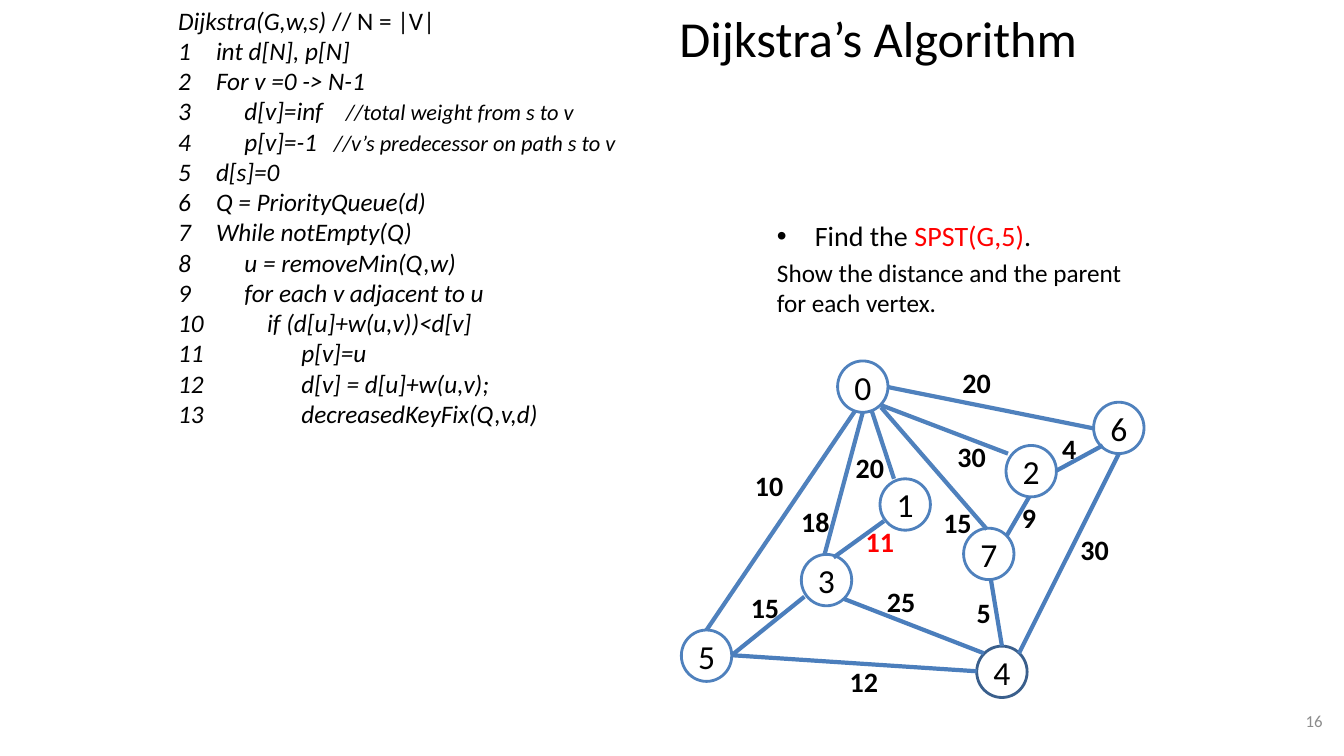
from lxml import etree
from pptx import Presentation
from pptx.dml.color import RGBColor
from pptx.enum.shapes import MSO_CONNECTOR, MSO_SHAPE
from pptx.enum.text import MSO_ANCHOR, MSO_AUTO_SIZE, PP_ALIGN
from pptx.oxml.ns import qn
from pptx.util import Pt

BLACK = RGBColor(0x00, 0x00, 0x00)
RED = RGBColor(0xFF, 0x00, 0x00)
GRAY = RGBColor(0x8C, 0x8C, 0x8C)
BLUE = RGBColor(0x4F, 0x81, 0xBD)
MID = RGBColor(0x4B, 0x7E, 0xBC)
DARK = RGBColor(0x3A, 0x5F, 0x8C)

LINE, OVAL = MSO_CONNECTOR.STRAIGHT, MSO_SHAPE.OVAL
MIDDLE, NO_FIT = MSO_ANCHOR.MIDDLE, MSO_AUTO_SIZE.NONE
LEFT, CENTER, RIGHT = PP_ALIGN.LEFT, PP_ALIGN.CENTER, PP_ALIGN.RIGHT

FONT = "Calibri"
NODE_W, NODE_H = 36, 36.7
HANG = 27  # room for a line number or bullet

# Depth in points, code, comment, tab stop of the comment
CODE = [
    (0, "int d[N], p[N]", "", 0),
    (0, "For v =0 -> N-1", "", 0),
    (20.3, "d[v]=inf", "//total weight from s to v", 119.7),
    (20.3, "p[v]=-1", "//v’s predecessor on path s to v", 111.2),
    (0, "d[s]=0", "", 0),
    (0, "Q = PriorityQueue(d)", "", 0),
    (0, "While notEmpty(Q)", "", 0),
    (20.3, "u = removeMin(Q,w)", "", 0),
    (20.3, "for each v adjacent to u", "", 0),
    (36.6, "if (d[u]+w(u,v))<d[v]", "", 0),
    (61, "p[v]=u", "", 0),
    (61, "d[v] = d[u]+w(u,v);", "", 0),
    (61, "decreasedKeyFix(Q,v,d)", "", 0),
]

# Vertex: left, top, outline
NODES = {
    0: (598.3, 257.8, BLUE),
    1: (628.6, 342, BLUE),
    7: (688.3, 377.3, BLUE),
    2: (718.6, 318.2, BLUE),
    5: (486.7, 450, BLUE),
    3: (572.4, 396, BLUE),
    4: (697.7, 461.5, DARK),
    6: (781.2, 287.3, BLUE),
}

# Weight, start, end, line colour, label corner, label colour
EDGES = [
    (20, (634.3, 276.5), (781.2, 306), BLUE, (680.4, 257.8), BLACK),
    (30, (629.3, 289.4), (720, 324), BLUE, (676.8, 310.3), BLACK),
    (20, (622.8, 293.8), (638.6, 342), BLUE, (604.1, 318.2), BLACK),
    (10, (610.6, 293.8), (504.7, 450), BLUE, (532.1, 331.2), BLACK),
    (15, (629.3, 290.9), (704.9, 378), BLUE, (666.7, 357.8), BLACK),
    (15, (522.7, 468), (574.6, 426.2), MID, (529.2, 418.3), BLACK),
    (12, (522.7, 468), (697.7, 479.5), MID, (599.8, 470.9), BLACK),
    (25, (602.6, 427.7), (702.7, 466.6), MID, (626.4, 414), BLACK),
    (5, (707.8, 414), (715.7, 461.5), MID, (690.5, 421.9), BLACK),
    (30, (799.2, 324), (727.9, 466.6), MID, (764.6, 376.6), BLACK),
    (18, (616.3, 294.5), (589, 396), BLUE, (565.2, 357.1), BLACK),
    (9, (719.3, 382.3), (735.1, 355), MID, (722.9, 354.2), BLACK),
    (4, (754.6, 336.2), (787.7, 318.2), MID, (751.7, 304.6), BLACK),
    (11, (595.4, 398.2), (631.4, 372.2), MID, (611.3, 370.8), RED),
]


def style(run, size, color=BLACK, bold=False, slant=False):
    font = run.font
    font.name, font.size = FONT, Pt(size)
    font.bold, font.italic = bold, slant
    font.color.rgb = color


def add_run(para, text, size, color=BLACK, slant=False):
    run = para.add_run()
    run.text = text
    style(run, size, color, slant=slant)


def add_text(slide, text, x, y, w, h, size, color=BLACK, bold=False, align=LEFT):
    box = slide.shapes.add_textbox(Pt(x), Pt(y), Pt(w), Pt(h))
    frame = box.text_frame
    frame.text = text
    para = frame.paragraphs[0]
    para.alignment = align
    for run in para.runs:
        style(run, size, color, bold)
    return frame


def hang(para, depth, tag, name, value, tab=0):
    """Hang the paragraph behind a bullet or number, with a tab stop if given."""
    props = para._p.get_or_add_pPr()
    room = Pt(HANG + depth)
    props.set("marL", str(room))
    props.set("indent", str(-room))
    font = etree.SubElement(props, qn("a:buFont"))
    font.set("typeface", "Arial" if tag == "a:buChar" else "+mj-lt")
    mark = etree.SubElement(props, qn(tag))
    mark.set(name, value)
    if tab:
        stops = etree.SubElement(props, qn("a:tabLst"))
        stop = etree.SubElement(stops, qn("a:tab"))
        stop.set("pos", str(Pt(tab)))
        stop.set("algn", "l")


def add_title(slide):
    title = slide.shapes.title
    title.left, title.top = Pt(451.4), Pt(5.8)
    title.width, title.height = Pt(352), Pt(41.8)
    frame = title.text_frame
    frame.text = "Dijkstra’s Algorithm"
    frame.auto_size, frame.vertical_anchor = NO_FIT, MIDDLE
    para = frame.paragraphs[0]
    para.alignment = CENTER
    style(para.runs[0], 36)


def add_code(slide):
    frame = add_text(slide, "", 120.2, 0, 331.9, 312.5, 18)
    head = frame.paragraphs[0]
    add_run(head, "Dijkstra(G,w,s) ", 18, slant=True)
    add_run(head, "// N = |V|", 18)
    for depth, code, note, tab in CODE:
        para = frame.add_paragraph()
        hang(para, depth, "a:buAutoNum", "type", "arabicPlain", tab)
        add_run(para, code + ("\t" if note else ""), 18, slant=True)
        if note:
            add_run(para, note, 16, slant=True)


def add_task(slide):
    frame = add_text(slide, "", 547.9, 152.6, 272.2, 90, 20)
    frame.word_wrap = True
    goal = frame.paragraphs[0]
    goal.space_before = Pt(4)
    hang(goal, 0, "a:buChar", "char", "•")
    add_run(goal, "Find the ", 20)
    add_run(goal, "SPST(G,5)", 20, RED)
    add_run(goal, ".", 20)
    hint = frame.add_paragraph()
    hint.space_before = Pt(3.6)
    add_run(hint, "Show the distance and the parent for each vertex.", 18)


def add_node(slide, label, x, y, color):
    node = slide.shapes.add_shape(OVAL, Pt(x), Pt(y), Pt(NODE_W), Pt(NODE_H))
    node.shadow.inherit = False
    node.fill.background()
    node.line.color.rgb, node.line.width = color, Pt(2)
    frame = node.text_frame
    frame.margin_left = frame.margin_right = Pt(0)
    frame.margin_top = frame.margin_bottom = Pt(0)
    frame.word_wrap, frame.vertical_anchor = False, MIDDLE
    frame.text = str(label)
    para = frame.paragraphs[0]
    para.alignment = CENTER
    style(para.runs[0], 24)


def add_edge(slide, weight, start, end, color, spot, ink):
    edge = slide.shapes.add_connector(LINE, *map(Pt, start + end))
    edge.line.color.rgb, edge.line.width = color, Pt(3)
    etree.SubElement(edge._element.spPr, qn("a:effectLst"))
    width = 35.3 if weight > 9 else 24.5
    add_text(slide, str(weight), *spot, width, 31.7, 20, ink, bold=True)


def main():
    deck = Presentation()
    deck.slide_width, deck.slide_height = Pt(960), Pt(540)
    slide = deck.slides.add_slide(deck.slide_layouts[5])

    # Title, code and task
    add_title(slide)
    add_code(slide)
    add_task(slide)

    # Weighted graph
    for label, place in NODES.items():
        add_node(slide, label, *place)
    for edge in EDGES:
        add_edge(slide, *edge)

    # Slide number
    page = add_text(slide, "16", 727.9, 500.4, 223.9, 28.8, 12, GRAY, align=RIGHT)
    page.word_wrap, page.vertical_anchor = True, MIDDLE

    deck.save("out.pptx")


if __name__ == "__main__":
    main()
